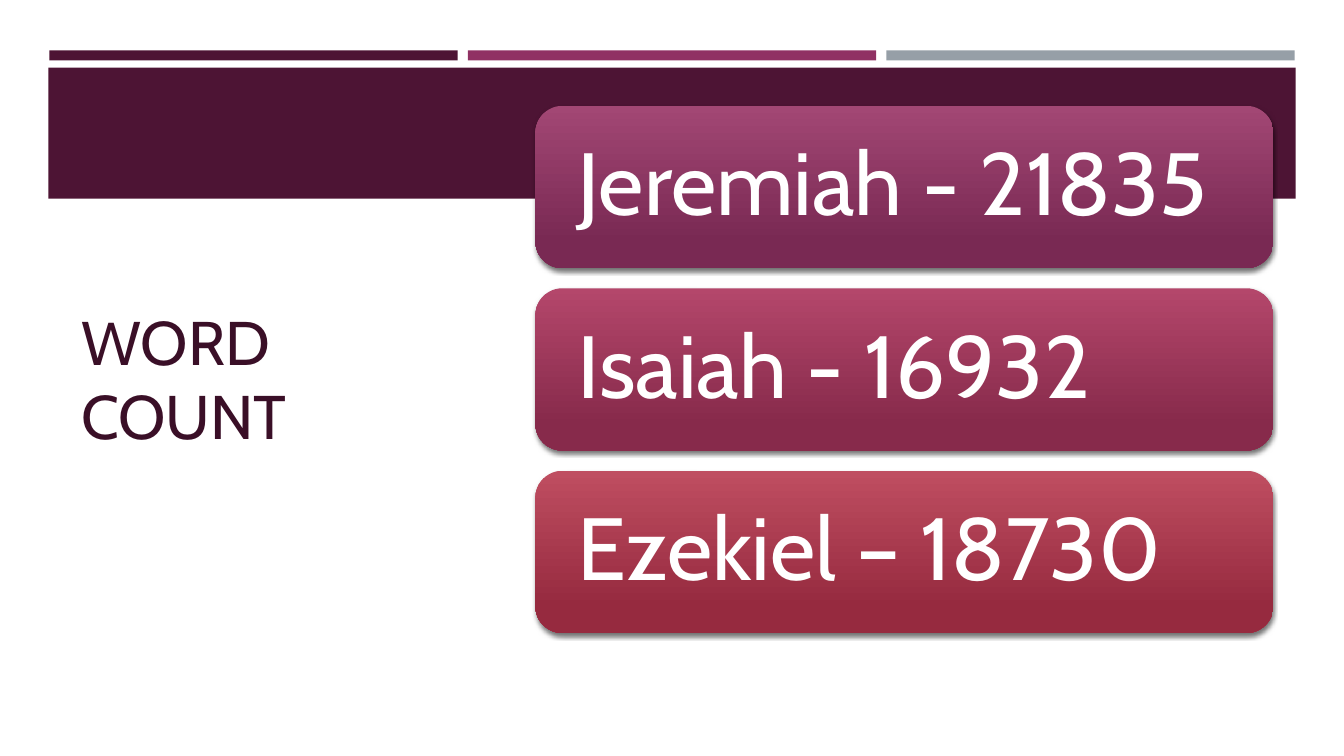
from dataclasses import dataclass

from lxml import etree
from pptx import Presentation
from pptx.dml.color import RGBColor
from pptx.enum.shapes import MSO_SHAPE as SHAPE
from pptx.enum.text import MSO_ANCHOR as ANCHOR, PP_ALIGN as ALIGN
from pptx.oxml import parse_xml
from pptx.util import Inches, Pt


@dataclass(frozen=True)
class Theme:
    font: str = "Cabin"
    plum: str = "4D1434"
    magenta: str = "903163"
    grey: str = "969FA7"
    title: str = "3A0F27"
    white: str = "FFFFFF"
    title_size: int = 44
    card_size: int = 63
    card_gradients: tuple = (
        ("A24774", "792953"),
        ("B4476B", "872A4B"),
        ("BF4E61", "962A3F"),
    )


theme = Theme()
rgb = RGBColor.from_string

CARD_SHADOW = """
<a:effectLst xmlns:a="http://schemas.openxmlformats.org/drawingml/2006/main">
  <a:outerShdw blurRad="38100" dist="25400" dir="5400000" rotWithShape="0">
    <a:srgbClr val="000000"><a:alpha val="55000"/></a:srgbClr>
  </a:outerShdw>
</a:effectLst>"""


def add_band(left, top, width, height, color):
    band = slide.shapes.add_shape(
        SHAPE.RECTANGLE, Inches(left), Inches(top), Inches(width), Inches(height))
    band.shadow.inherit = False
    band.fill.solid()
    band.fill.fore_color.rgb = rgb(color)
    band.line.fill.background()


def set_text(shape, text, size, color, inset):
    """Fill a shape with one left-aligned, vertically centred paragraph."""
    frame = shape.text_frame
    frame.text = text
    frame.word_wrap = True
    frame.vertical_anchor = ANCHOR.MIDDLE
    frame.margin_left = frame.margin_right = Inches(inset)
    paragraph = frame.paragraphs[0]
    paragraph.alignment = ALIGN.LEFT
    font = paragraph.runs[0].font
    font.name = theme.font
    font.size = Pt(size)
    font.color.rgb = rgb(color)
    return paragraph


prs = Presentation()
prs.slide_width, prs.slide_height = Inches(13.33), Inches(7.5)
slide = prs.slides.add_slide(prs.slide_layouts[6])

# Header: three thin stripes over a wide band
for column, color in enumerate((theme.plum, theme.magenta, theme.grey)):
    add_band(0.49 + 4.15 * column, 0.5, 4.05, 0.1, color)
add_band(0.48, 0.67, 12.37, 1.3, theme.plum)

title = slide.shapes.add_textbox(
    Inches(0.71), Inches(1.51), Inches(3.88), Inches(4.48))
set_text(title, "WORD COUNT", theme.title_size, theme.title, inset=0.1)

# One card per book
books = ("Jeremiah - 21835", "Isaiah - 16932", "Ezekiel – 18730")
for row, (book, gradient) in enumerate(zip(books, theme.card_gradients)):
    card = slide.shapes.add_shape(
        SHAPE.ROUNDED_RECTANGLE,
        Inches(5.31), Inches(1.05 + 1.81 * row), Inches(7.32), Inches(1.61))
    card.line.fill.background()
    card.fill.gradient()
    card.fill.gradient_angle = 270
    for stop, position, color in zip(card.fill.gradient_stops, (0, 0.84), gradient):
        stop.position = position
        stop.color.rgb = rgb(color)
    card._element.spPr.append(parse_xml(CARD_SHADOW))
    label = set_text(card, book, theme.card_size, theme.white, inset=0.34)
    label.line_spacing = 0.9

prs.save("out.pptx")
